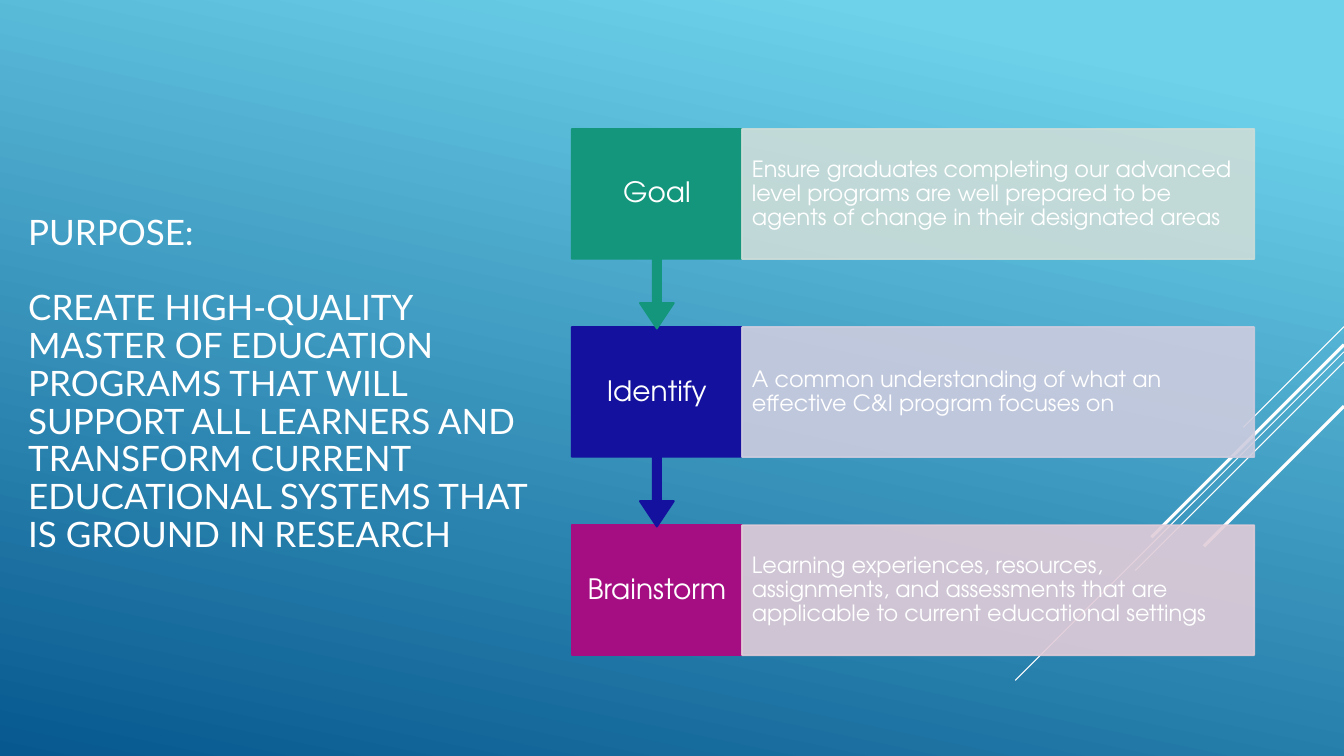
from lxml.etree import SubElement
from pptx import Presentation
from pptx.dml.color import RGBColor
from pptx.enum.shapes import MSO_CONNECTOR, MSO_SHAPE
from pptx.enum.text import MSO_ANCHOR, MSO_AUTO_SIZE, PP_ALIGN
from pptx.oxml.ns import qn
from pptx.util import Inches, Pt

TITLE = [
    "PURPOSE:",
    "CREATE HIGH-QUALITY MASTER OF EDUCATION PROGRAMS THAT WILL SUPPORT ALL "
    "LEARNERS AND TRANSFORM CURRENT EDUCATIONAL SYSTEMS THAT IS GROUND IN RESEARCH",
]
STEPS = [
    ("Goal", "Ensure graduates completing our advanced level programs are well "
     "prepared to be agents of change in their designated areas", "green"),
    ("Identify", "A common understanding of what an effective C&I program focuses on", "blue"),
    ("Brainstorm", "Learning experiences, resources, assignments, and assessments "
     "that are applicable to current educational settings", "magenta"),
]
STREAKS = [(3.24, 1.0, 0.75), (3.49, 3.26, 0.75), (3.59, 2.07, 0.75),
           (3.42, 1.91, 2.25), (4.03, 1.39, 2.25)]
COLORS = {
    "sky": "6ED2EB", "deep": "06588E", "white": "FFFFFF",
    "green": "14967C", "blue": "13119D", "magenta": "A50E82",
    "green tint": "CCDDD8", "blue tint": "CDCCDF", "magenta tint": "E1CCD8",
}
HEAD_FONT, BODY_FONT = "Lato", "TeX Gyre Adventor"
W, H = 13.33, 7.5
LEFT, TOP, LABEL_W, DETAIL_W = 5.67, 1.28, 1.69, 5.08
ROW_H, PITCH, CALLOUT_H = 1.29, 1.965, 1.98
CALLOUT_ADJ = (0.05, 0.1, 0.15, 0.65)


def rgb(name):
    return RGBColor.from_string(COLORS[name])


def write(shape, paragraphs, size, font, align=PP_ALIGN.LEFT, inset=(0.1, 0.05), gap=0):
    tf = shape.text_frame
    tf.word_wrap = True
    tf.auto_size = MSO_AUTO_SIZE.NONE
    tf.vertical_anchor = MSO_ANCHOR.MIDDLE
    tf.margin_left = tf.margin_right = Inches(inset[0])
    tf.margin_top = tf.margin_bottom = Inches(inset[1])
    for i, text in enumerate(paragraphs):
        p = tf.paragraphs[0] if i == 0 else tf.add_paragraph()
        p.alignment = align
        p.line_spacing = 0.9
        p.space_before = Pt(gap if i else 0)
        r = p.add_run()
        r.text = text
        r.font.size = Pt(size)
        r.font.name = font
        r.font.color.rgb = rgb("white")


def add_box(s, kind, x, y, w, h, color, opacity=100):
    box = s.shapes.add_shape(kind, Inches(x), Inches(y), Inches(w), Inches(h))
    box.shadow.inherit = False
    box.fill.solid()
    box.fill.fore_color.rgb = rgb(color)
    box.line.color.rgb = rgb(color)
    box.line.width = Pt(1.25)
    if opacity < 100:
        for clr in box._element.spPr.iter(qn("a:srgbClr")):
            SubElement(clr, qn("a:alpha"), val=str(opacity * 1000))
    return box


def add_background(s):
    fill = s.background.fill
    fill.gradient()
    fill.gradient_angle = 258
    for stop, color, position in zip(fill.gradient_stops, ("sky", "deep"), (0.1, 1)):
        stop.color.rgb = rgb(color)
        stop.position = position


def add_streak(s, y, run, width):
    line = s.shapes.add_connector(MSO_CONNECTOR.STRAIGHT, Inches(W), Inches(y),
                                  Inches(W - run), Inches(y + run))
    line.line.color.rgb = rgb("white")
    line.line.width = Pt(width)
    SubElement(line._element.spPr, qn("a:effectLst"))


def add_step(s, row, label, detail, color):
    y = TOP + row * PITCH
    last = row == len(STEPS) - 1
    kind = MSO_SHAPE.RECTANGLE if last else MSO_SHAPE.DOWN_ARROW_CALLOUT
    box = add_box(s, kind, LEFT, y, LABEL_W, ROW_H if last else CALLOUT_H, color)
    if not last:
        for i, value in enumerate(CALLOUT_ADJ):
            box.adjustments[i] = value
    write(box, [label], 20, BODY_FONT, align=PP_ALIGN.CENTER, inset=(0.12, 0.16))
    panel = add_box(s, MSO_SHAPE.RECTANGLE, LEFT + LABEL_W, y, DETAIL_W, ROW_H,
                    color + " tint", opacity=90)
    write(panel, [detail], 16, BODY_FONT, inset=(0.1, 0.22))


def main():
    prs = Presentation()
    prs.slide_width, prs.slide_height = Inches(W), Inches(H)
    s = prs.slides.add_slide(prs.slide_layouts[5])
    add_background(s)
    for streak in STREAKS:
        add_streak(s, *streak)
    title = s.shapes.title
    title.left, title.top = Inches(0.18), Inches(0.75)
    title.width, title.height = Inches(5.35), Inches(6.14)
    write(title, TITLE, 25, HEAD_FONT, gap=27)
    for row, step in reversed(list(enumerate(STEPS))):
        add_step(s, row, *step)
    prs.save("out.pptx")


if __name__ == "__main__":
    main()
